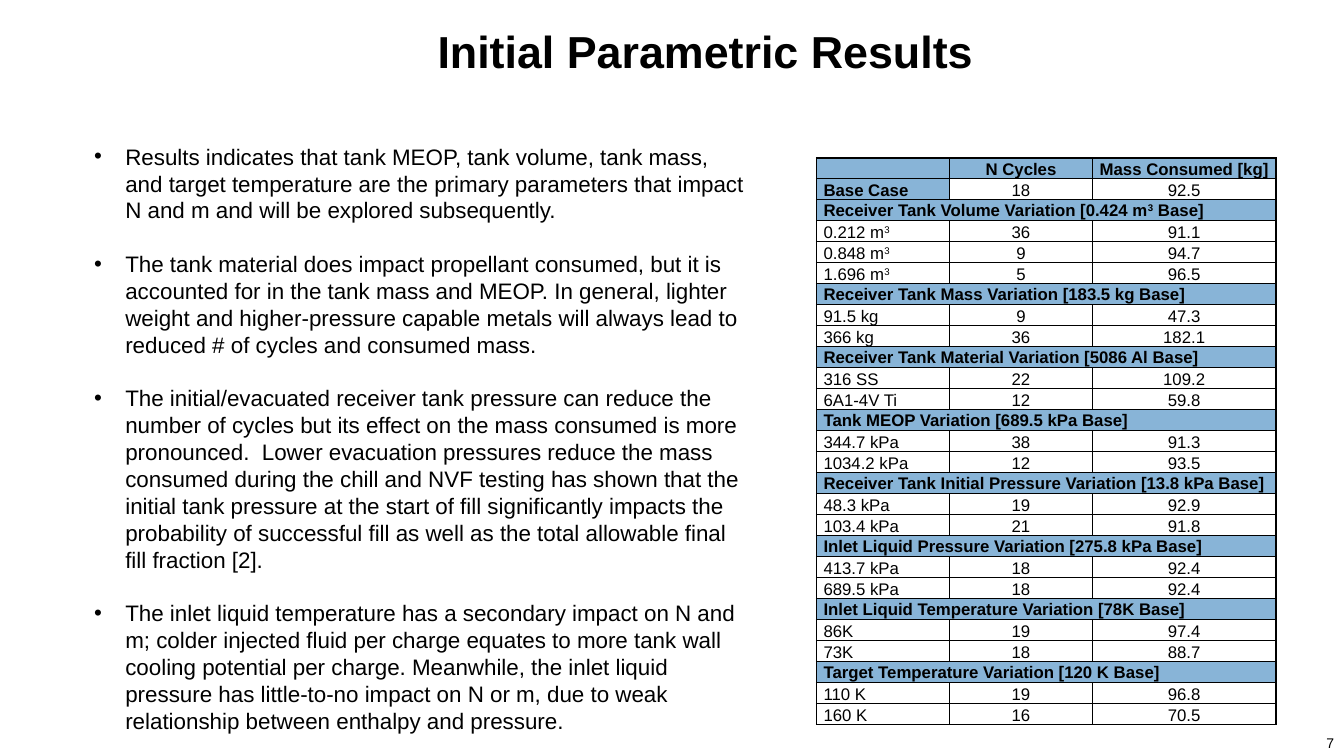
from lxml.etree import SubElement
from pptx import Presentation
from pptx.dml.color import RGBColor
from pptx.enum.text import MSO_ANCHOR, MSO_AUTO_SIZE, PP_ALIGN
from pptx.oxml import parse_xml
from pptx.oxml.ns import nsdecls, qn
from pptx.util import Inches, Pt

LEFT, CENTER, RIGHT, JUSTIFY = PP_ALIGN.LEFT, PP_ALIGN.CENTER, PP_ALIGN.RIGHT, PP_ALIGN.JUSTIFY
TOP, MIDDLE, BOTTOM = MSO_ANCHOR.TOP, MSO_ANCHOR.MIDDLE, MSO_ANCHOR.BOTTOM
NO_AUTOFIT = MSO_AUTO_SIZE.NONE

BLACK = RGBColor(0x00, 0x00, 0x00)
HEADER_BLUE = RGBColor(0x88, 0xB4, 0xD7)
FONT = "Arial"

SLIDE_WIDTH, SLIDE_HEIGHT = Inches(13.33), Inches(7.5)
GRID_COLUMNS, GRID_ROWS = 80, 45

# Boxes in grid units: left, top, width, height
TITLE_BOX = (10, 1.5, 64, 3)
FINDINGS_BOX = (5, 8.2, 40, 36.1)
TABLE_BOX = (48.6, 9.4, 27.36, 33.75)
NUMBER_BOX = (76, 43.4, 4, 1.6)
COLUMN_SHARES = (0.29, 0.31, 0.4)

FINDINGS = [
    "Results indicates that tank MEOP, tank volume, tank mass, and target temperature are the "
    "primary parameters that impact N and m and will be explored subsequently.",
    "The tank material does impact propellant consumed, but it is accounted for in the tank mass "
    "and MEOP. In general, lighter weight and higher-pressure capable metals will always lead to "
    "reduced # of cycles and consumed mass.",
    "The initial/evacuated receiver tank pressure can reduce the number of cycles but its effect "
    "on the mass consumed is more pronounced.  Lower evacuation pressures reduce the mass consumed "
    "during the chill and NVF testing has shown that the initial tank pressure at the start of "
    "fill significantly impacts the probability of successful fill as well as the total allowable "
    "final fill fraction [2].",
    "The inlet liquid temperature has a secondary impact on N and m; colder injected fluid per "
    "charge equates to more tank wall cooling potential per charge. Meanwhile, the inlet liquid "
    "pressure has little-to-no impact on N or m, due to weak relationship between enthalpy and "
    "pressure.",
]

# One-item rows are section headings; text between ^ marks is superscript
RESULTS = [
    ("", "N Cycles", "Mass Consumed [kg]"),
    ("Base Case", "18", "92.5"),
    ("Receiver Tank Volume Variation [0.424 m^3^ Base]",),
    ("0.212 m^3^", "36", "91.1"),
    ("0.848 m^3^", "9", "94.7"),
    ("1.696 m^3^", "5", "96.5"),
    ("Receiver Tank Mass Variation [183.5 kg Base]",),
    ("91.5 kg", "9", "47.3"),
    ("366 kg", "36", "182.1"),
    ("Receiver Tank Material Variation [5086 Al Base]",),
    ("316 SS", "22", "109.2"),
    ("6A1-4V Ti", "12", "59.8"),
    ("Tank MEOP Variation [689.5 kPa Base]",),
    ("344.7 kPa", "38", "91.3"),
    ("1034.2 kPa", "12", "93.5"),
    ("Receiver Tank Initial Pressure Variation [13.8 kPa Base]",),
    ("48.3 kPa", "19", "92.9"),
    ("103.4 kPa", "21", "91.8"),
    ("Inlet Liquid Pressure Variation [275.8 kPa Base]",),
    ("413.7 kPa", "18", "92.4"),
    ("689.5 kPa", "18", "92.4"),
    ("Inlet Liquid Temperature Variation [78K Base]",),
    ("86K", "19", "97.4"),
    ("73K", "18", "88.7"),
    ("Target Temperature Variation [120 K Base]",),
    ("110 K", "19", "96.8"),
    ("160 K", "16", "70.5"),
]


def grid_box(box):
    """Turn a box in grid units into slide lengths."""
    units = (SLIDE_WIDTH / GRID_COLUMNS, SLIDE_HEIGHT / GRID_ROWS) * 2
    return [round(length * unit) for length, unit in zip(box, units)]


def place(shape, box):
    shape.left, shape.top, shape.width, shape.height = grid_box(box)


def style_paragraph(paragraph, size, alignment, bold=False):
    paragraph.alignment = alignment
    font = paragraph.font
    font.name, font.size, font.bold = FONT, Pt(size), bold
    font.color.rgb = BLACK


def add_title(slide, box):
    title = slide.shapes.title
    place(title, box)
    frame = title.text_frame
    frame.text = "Initial Parametric Results"
    frame.auto_size, frame.vertical_anchor = NO_AUTOFIT, MIDDLE
    style_paragraph(frame.paragraphs[0], 32, CENTER, bold=True)


def add_findings(slide, box):
    body = slide.placeholders[1]
    place(body, box)
    frame = body.text_frame
    frame.text = "\n".join(FINDINGS)
    frame.auto_size, frame.vertical_anchor = NO_AUTOFIT, TOP
    for index, paragraph in enumerate(frame.paragraphs):
        properties = paragraph._p.get_or_add_pPr()
        indent = Inches(0.31)
        properties.set("marL", str(indent))
        properties.set("indent", str(-indent))
        paragraph.line_spacing = 1.0
        paragraph.space_before = Pt(19.2 if index else 0)
        SubElement(properties, qn("a:buFont"), typeface=FONT)
        SubElement(properties, qn("a:buChar"), char="•")
        style_paragraph(paragraph, 16, LEFT)


def add_borders(cell):
    properties = cell._tc.get_or_add_tcPr()
    for position, side in enumerate(("lnL", "lnR", "lnT", "lnB")):
        border = parse_xml(
            f'<a:{side} {nsdecls("a")} w="{Pt(1)}"><a:solidFill>'
            f'<a:srgbClr val="{BLACK}"/></a:solidFill></a:{side}>')
        properties.insert(position, border)


def fill_cell(cell, text, alignment, anchor, header):
    cell.margin_left = cell.margin_right = Inches(0.07)
    cell.margin_top = cell.margin_bottom = 0
    cell.vertical_anchor = anchor
    if header:
        cell.fill.solid()
        cell.fill.fore_color.rgb = HEADER_BLUE
    else:
        cell.fill.background()
    add_borders(cell)
    paragraph = cell.text_frame.paragraphs[0]
    paragraph.line_spacing = 1.07
    style_paragraph(paragraph, 12, alignment, bold=header)
    if not text:
        SubElement(paragraph._p, qn("a:endParaRPr"), sz="1200")
        return
    for index, part in enumerate(text.split("^")):
        if part:
            run = paragraph.add_run()
            run.text = part
            if index % 2:
                run._r.get_or_add_rPr().set("baseline", "30000")


def add_results_table(slide, box):
    left, top, width, height = grid_box(box)
    column_count = len(COLUMN_SHARES)
    table = slide.shapes.add_table(
        len(RESULTS), column_count, left, top, width, height).table
    table.first_row = table.horz_banding = False
    for column, share in zip(table.columns, COLUMN_SHARES):
        column.width = round(width * share)
    for row_index, values in enumerate(RESULTS):
        table.rows[row_index].height = round(height / len(RESULTS))
        section = len(values) == 1
        if section:
            table.cell(row_index, 0).merge(table.cell(row_index, column_count - 1))
            values += ("",) * (column_count - 1)
        for column_index, text in enumerate(values):
            header = section or row_index == 0 or text == "Base Case"
            fill_cell(table.cell(row_index, column_index), text,
                      CENTER if column_index else JUSTIFY,
                      MIDDLE if section else BOTTOM, header)


def add_page_number(slide, box):
    frame = slide.shapes.add_textbox(*grid_box(box)).text_frame
    frame.word_wrap = True
    frame.text = "7"
    style_paragraph(frame.paragraphs[0], 10, RIGHT)


def main():
    presentation = Presentation()
    presentation.slide_width, presentation.slide_height = SLIDE_WIDTH, SLIDE_HEIGHT
    slide = presentation.slides.add_slide(presentation.slide_layouts[1])
    add_title(slide, TITLE_BOX)
    add_results_table(slide, TABLE_BOX)
    add_page_number(slide, NUMBER_BOX)
    add_findings(slide, FINDINGS_BOX)
    presentation.save("out.pptx")


if __name__ == "__main__":
    main()
